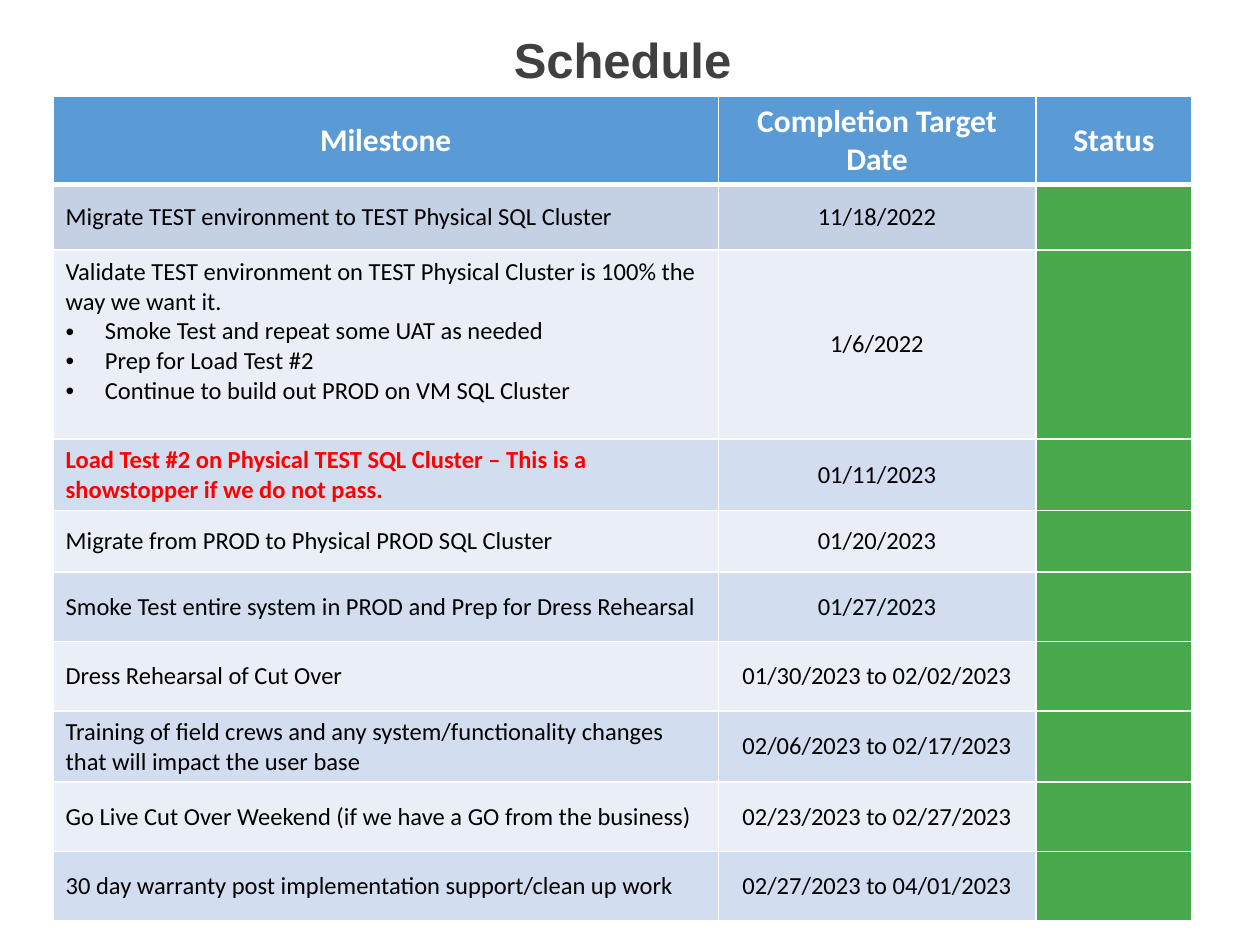
from dataclasses import dataclass

from lxml import etree
from pptx import Presentation
from pptx.dml.color import RGBColor
from pptx.enum import text as t
from pptx.oxml import ns
from pptx.util import Cm, Pt

WHITE, BLACK, RED, DARK_GRAY = "FFFFFF", "000000", "FF0000", "404040"
HEADER_BLUE, FIRST_BAND, DONE_GREEN = "5B9BD5", "C4D1E4", "49A74C"
BANDS = ("EAEFF7", "D2DEEF")
LEFT, WIDTH = Cm(1.07), Cm(22.96)
COLUMN_WIDTHS = (13.41, 6.4, 3.15)
HEADINGS = ("Milestone", "Completion Target Date", "Status")
HEADER_HEIGHT = 1.75


@dataclass
class Milestone:
    task: str
    target: str
    height: float = 1.4
    steps: tuple[str, ...] = ()
    critical: bool = False


MILESTONES = (
    Milestone("Migrate TEST environment to TEST Physical SQL Cluster", "11/18/2022", 1.32),
    Milestone(
        "Validate TEST environment on TEST Physical Cluster is 100% the way we want it.",
        "1/6/2022",
        3.81,
        steps=(
            "Smoke Test and repeat some UAT as needed",
            "Prep for Load Test #2",
            "Continue to build out PROD on VM SQL Cluster",
        ),
    ),
    Milestone(
        "Load Test #2 on Physical TEST SQL Cluster – This is a showstopper if we do not pass.",
        "01/11/2023",
        1.44,
        critical=True,
    ),
    Milestone("Migrate from PROD to Physical PROD SQL Cluster", "01/20/2023", 1.24),
    Milestone("Smoke Test entire system in PROD and Prep for Dress Rehearsal", "01/27/2023"),
    Milestone("Dress Rehearsal of Cut Over", "01/30/2023 to 02/02/2023"),
    Milestone(
        "Training of field crews and any system/functionality changes that will impact the user base",
        "02/06/2023 to 02/17/2023",
        1.44,
    ),
    Milestone("Go Live Cut Over Weekend (if we have a GO from the business)", "02/23/2023 to 02/27/2023"),
    Milestone("30 day warranty post implementation support/clean up work", "02/27/2023 to 04/01/2023"),
)


def rgb(value: str) -> RGBColor:
    return RGBColor.from_string(value)


def format_text(frame, size: float, color: str, bold=False, centered=False, font="Calibri") -> None:
    for paragraph in frame.paragraphs:
        paragraph.alignment = t.PP_ALIGN.CENTER if centered else t.PP_ALIGN.LEFT
        for run in paragraph.runs:
            run.font.name, run.font.size, run.font.bold = font, Pt(size), bold
            run.font.color.rgb = rgb(color)


def add_border(cell, side: str, width: float) -> None:
    line = etree.SubElement(cell._tc.get_or_add_tcPr(), ns.qn(f"a:ln{side}"), w=str(Pt(width)))
    fill = etree.SubElement(line, ns.qn("a:solidFill"))
    etree.SubElement(fill, ns.qn("a:srgbClr"), val=WHITE)


def style_cell(cell, fill: str, top: float = 1, bottom: float = 1) -> None:
    """Give the cell white borders, a solid fill and middle anchoring."""
    for side, width in (("L", 1), ("R", 1), ("T", top), ("B", bottom)):
        add_border(cell, side, width)
    cell.fill.solid()
    cell.fill.fore_color.rgb = rgb(fill)
    cell.vertical_anchor = t.MSO_ANCHOR.MIDDLE


def add_bullet(paragraph) -> None:
    properties = paragraph._p.get_or_add_pPr()
    properties.set("marL", str(Cm(0.79)))
    properties.set("indent", str(Cm(-0.79)))
    etree.SubElement(properties, ns.qn("a:buFont"), typeface="Arial")
    etree.SubElement(properties, ns.qn("a:buChar"), char="•")


def fill_milestone(cells, milestone: Milestone, index: int) -> None:
    task, target, status = cells
    band = BANDS[(index - 1) % 2] if index else FIRST_BAND
    for cell, fill in ((task, band), (target, band), (status, DONE_GREEN)):
        style_cell(cell, fill, top=1 if index else 3)

    task.text_frame.text = milestone.task
    for step in milestone.steps:
        paragraph = task.text_frame.add_paragraph()
        paragraph.text = step
        add_bullet(paragraph)
    if milestone.steps:
        task.margin_bottom = Cm(0.65)
    format_text(task.text_frame, 14, RED if milestone.critical else BLACK, bold=milestone.critical)

    target.text_frame.text = milestone.target
    format_text(target.text_frame, 14, BLACK, centered=True)


def add_title(slide) -> None:
    frame = slide.shapes.add_textbox(LEFT, Cm(0.48), WIDTH, Cm(1.45)).text_frame
    frame.word_wrap = True
    frame.text = "Schedule"
    format_text(frame, 28, DARK_GRAY, bold=True, centered=True, font="Arial")


def add_schedule(slide) -> None:
    heights = (HEADER_HEIGHT, *(milestone.height for milestone in MILESTONES))
    schedule = slide.shapes.add_table(
        len(heights), len(HEADINGS), LEFT, Cm(1.94), WIDTH, Cm(sum(heights))
    ).table
    schedule.horz_banding = False
    for column, width in zip(schedule.columns, COLUMN_WIDTHS):
        column.width = Cm(width)
    for row, height in zip(schedule.rows, heights):
        row.height = Cm(height)

    header, *body = schedule.rows
    for cell, heading in zip(header.cells, HEADINGS):
        style_cell(cell, HEADER_BLUE, bottom=3)
        cell.text_frame.text = heading
        format_text(cell.text_frame, 18, WHITE, bold=True, centered=True)
    for index, (row, milestone) in enumerate(zip(body, MILESTONES)):
        fill_milestone(row.cells, milestone, index)


def main() -> None:
    deck = Presentation()
    deck.slide_width, deck.slide_height = Cm(25.4), Cm(19.05)
    slide = deck.slides.add_slide(deck.slide_layouts[6])
    add_title(slide)
    add_schedule(slide)
    deck.save("out.pptx")


if __name__ == "__main__":
    main()
